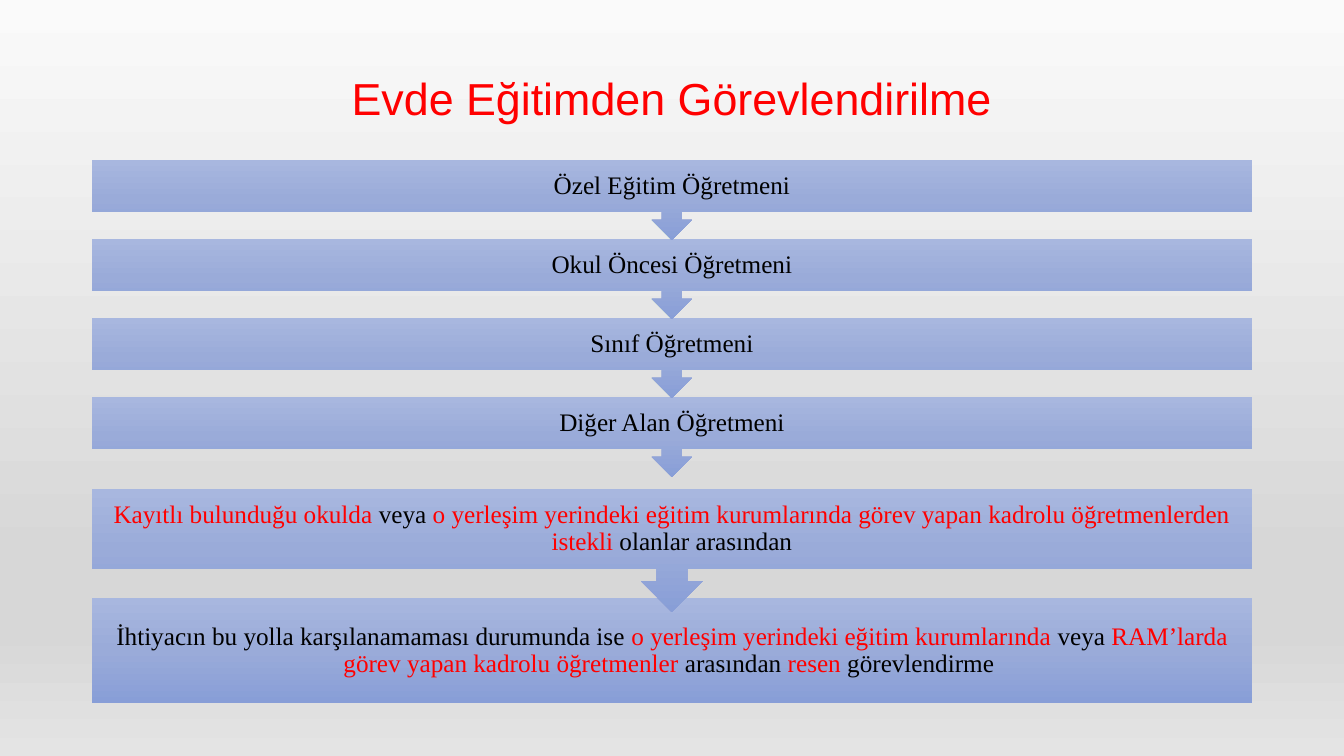
from lxml import etree
from pptx import Presentation
from pptx.dml.color import RGBColor
from pptx.enum.shapes import MSO_SHAPE
from pptx.enum.text import MSO_ANCHOR, MSO_AUTO_SIZE, PP_ALIGN
from pptx.oxml.ns import qn
from pptx.util import Emu, Pt

CENTER = PP_ALIGN.CENTER
MIDDLE = MSO_ANCHOR.MIDDLE
NO_FIT = MSO_AUTO_SIZE.NONE
RECTANGLE = MSO_SHAPE.RECTANGLE
CALLOUT = MSO_SHAPE.DOWN_ARROW_CALLOUT

PX = 914400 / 100.8
WIDTH, HEIGHT = 1344, 756
LEFT, STEP_WIDTH = 92, 1160
FIRST_TOP, PITCH, TEACHER_HEIGHT = 160, 79, 80

COLORS = {"red": "FF0000", "black": "000000"}
STEP_STOPS = [(0, "A8B7DF"), (50, "9AABD9"), (100, "889ED7")]
PAGE_STOPS = [(0, "FAFAFA"), (74, "D7D7D7"), (83, "D7D7D7"), (100, "E4E4E4")]

TEACHERS = [
    "Özel Eğitim Öğretmeni",
    "Okul Öncesi Öğretmeni",
    "Sınıf Öğretmeni",
    "Diğer Alan Öğretmeni",
]
VOLUNTEERS = [
    ("Kayıtlı bulunduğu okulda ", "red"),
    ("veya ", "black"),
    ("o yerleşim yerindeki eğitim kurumlarında görev yapan kadrolu "
     "öğretmenlerden istekli", "red"),
    (" olanlar arasından", "black"),
]
APPOINTED = [
    ("İhtiyacın bu yolla karşılanamaması durumunda ise ", "black"),
    ("o yerleşim yerindeki eğitim kurumlarında ", "red"),
    ("veya ", "black"),
    ("RAM’larda görev yapan kadrolu öğretmenler ", "red"),
    ("arasından ", "black"),
    ("resen", "red"),
    (" görevlendirme ", "black"),
]


def px(length):
    return Emu(round(length * PX))


class FlowSlide:
    def __init__(self, deck):
        self.page = deck.slides.add_slide(deck.slide_layouts[5])

    def paint(self, fill, owner, stops):
        """Fill with a top-to-bottom gradient of (percent, colour) stops."""
        fill.gradient()
        fill.gradient_angle = 270
        stop_list = owner.find(".//" + qn("a:gsLst"))
        for old_stop in list(stop_list):
            stop_list.remove(old_stop)
        for percent, color in stops:
            stop = etree.SubElement(stop_list, qn("a:gs"), pos=str(percent * 1000))
            etree.SubElement(stop, qn("a:srgbClr"), val=color)

    def background(self, stops):
        self.paint(self.page.background.fill, self.page._element, stops)

    def add_spans(self, frame, spans, font, size):
        frame.word_wrap = True
        frame.auto_size = NO_FIT
        frame.vertical_anchor = MIDDLE
        para = frame.paragraphs[0]
        para.alignment = CENTER
        para.line_spacing = 0.9
        for text, color in spans:
            span = para.add_run()
            span.text = text
            span.font.name = font
            span.font.size = Pt(size)
            span.font.color.rgb = RGBColor.from_string(COLORS[color])

    def title(self, text, left, top, width, height):
        box = self.page.shapes.title
        box.left, box.top = px(left), px(top)
        box.width, box.height = px(width), px(height)
        self.add_spans(box.text_frame, [(text, "red")], "Arial", 32)

    def step(self, kind, top, height, spans):
        box = self.page.shapes.add_shape(
            kind, px(LEFT), px(top), px(STEP_WIDTH), px(height))
        box.shadow.inherit = False
        box.line.fill.background()
        self.paint(box.fill, box._element, STEP_STOPS)
        frame = box.text_frame
        frame.margin_left = frame.margin_right = px(14)
        frame.margin_top = frame.margin_bottom = px(14)
        self.add_spans(frame, spans, "Times New Roman", 18)


def main():
    deck = Presentation()
    deck.slide_width, deck.slide_height = px(WIDTH), px(HEIGHT)
    slide = FlowSlide(deck)
    slide.background(PAGE_STOPS)
    slide.title("Evde Eğitimden Görevlendirilme", LEFT, 52, STEP_WIDTH, 97)

    # Bottom step first, so that each arrow lies over the step below it.
    slide.step(RECTANGLE, 598, 105, APPOINTED)
    slide.step(CALLOUT, 489, 123, VOLUNTEERS)
    for row, teacher in reversed(list(enumerate(TEACHERS))):
        slide.step(CALLOUT, FIRST_TOP + row * PITCH, TEACHER_HEIGHT,
                   [(teacher, "black")])
    deck.save("out.pptx")


if __name__ == "__main__":
    main()
